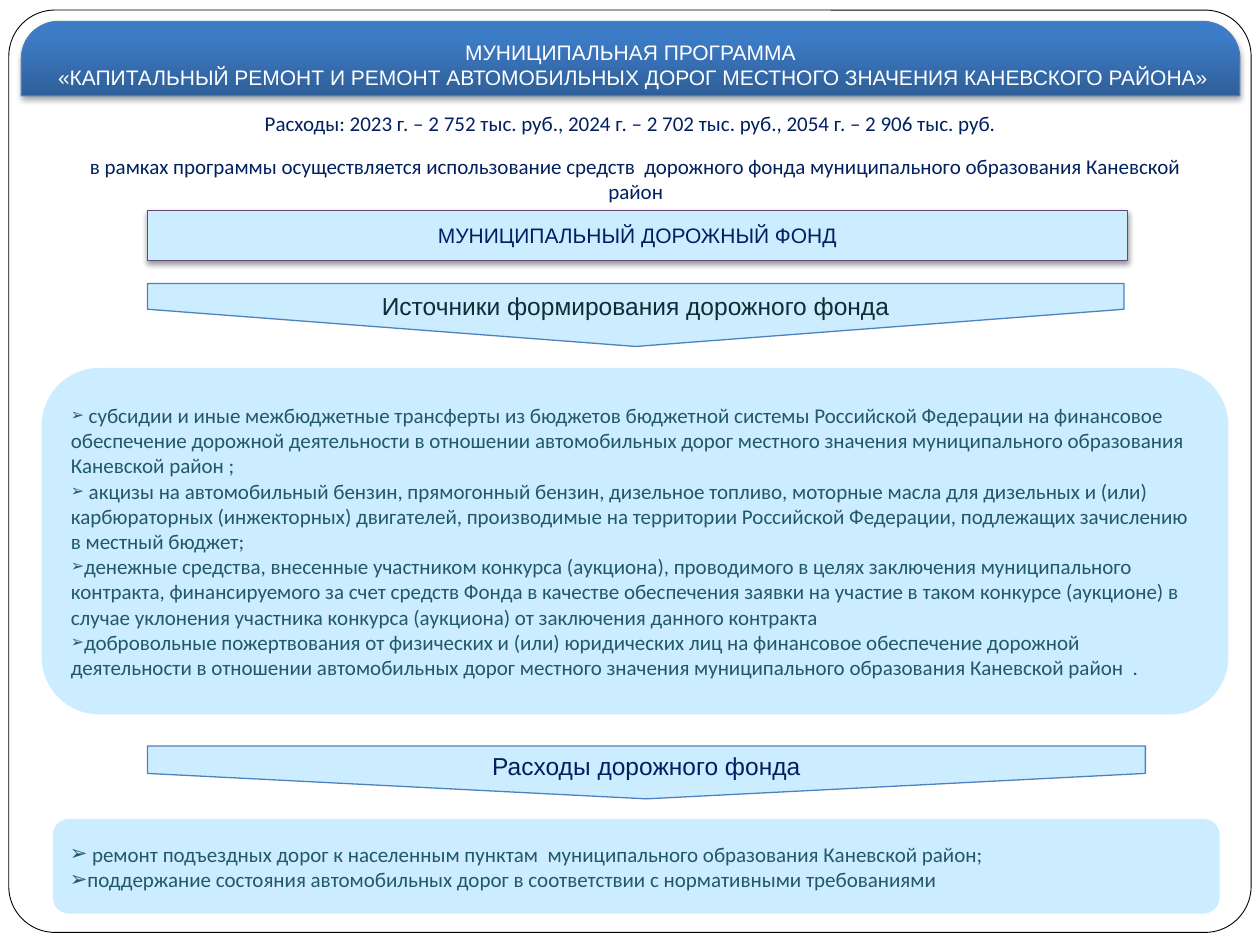
from lxml import etree
from pptx import Presentation
from pptx.dml.color import RGBColor
from pptx.enum import shapes, text
from pptx.oxml.ns import qn
from pptx.util import Inches, Pt

COLORS = {
    "white": "FFFFFF", "black": "000000", "panel": "CCECFF", "navy": "002060",
    "teal": "215968", "dark_teal": "102C34", "blue": "4F81BD", "purple": "604A7B",
    "header_line": "4B7EBC", "header_dark": "2F5F99", "header_light": "3D7CC7",
}
SHAPE = shapes.MSO_SHAPE
ANCHOR = text.MSO_ANCHOR

TITLE = [
    "МУНИЦИПАЛЬНАЯ ПРОГРАММА",
    " «КАПИТАЛЬНЫЙ РЕМОНТ И РЕМОНТ АВТОМОБИЛЬНЫХ ДОРОГ МЕСТНОГО ЗНАЧЕНИЯ КАНЕВСКОГО РАЙОНА»",
]
COSTS = "Расходы: 2023 г. – 2 752 тыс. руб., 2024 г. – 2 702 тыс. руб., 2054 г. – 2 906 тыс. руб."
PURPOSE = ("в рамках программы осуществляется использование средств  дорожного фонда "
           "муниципального образования Каневской район")
SOURCES = [
    " субсидии и иные межбюджетные трансферты из бюджетов бюджетной системы Российской "
    "Федерации на финансовое обеспечение дорожной деятельности в отношении автомобильных "
    "дорог местного значения муниципального образования Каневской район ;",
    " акцизы на автомобильный бензин, прямогонный бензин, дизельное топливо, моторные масла "
    "для дизельных и (или) карбюраторных (инжекторных) двигателей, производимые на территории "
    "Российской Федерации, подлежащих зачислению в местный бюджет;",
    "денежные средства, внесенные участником конкурса (аукциона), проводимого в целях "
    "заключения муниципального контракта, финансируемого за счет средств Фонда в качестве "
    "обеспечения заявки на участие в таком конкурсе (аукционе) в случае уклонения участника "
    "конкурса (аукциона) от заключения данного контракта",
    "добровольные пожертвования от физических и (или) юридических лиц на финансовое "
    "обеспечение дорожной деятельности в отношении автомобильных дорог местного значения "
    "муниципального образования Каневской район  .",
]
SPENDING = [
    " ремонт подъездных дорог к населенным пунктам  муниципального образования Каневской район;",
    "поддержание состояния автомобильных дорог в соответствии с нормативными требованиями",
]


def rgb(name):
    return RGBColor.from_string(COLORS[name])


def write(shape, lines, color="navy", font="Calibri", size=12,
          align=text.PP_ALIGN.CENTER, anchor=ANCHOR.MIDDLE, bullet_size=None):
    frame = shape.text_frame
    frame.word_wrap = True
    frame.auto_size = text.MSO_AUTO_SIZE.NONE
    frame.vertical_anchor = anchor
    for index, line in enumerate(lines):
        paragraph = frame.add_paragraph() if index else frame.paragraphs[0]
        paragraph.alignment = align
        run = paragraph.add_run()
        run.text = line
        run.font.name, run.font.size = font, Pt(size)
        run.font.color.rgb = rgb(color)
        if bullet_size:
            add_bullet(paragraph, bullet_size)


def add_bullet(paragraph, percent):
    properties = paragraph._p.get_or_add_pPr()
    properties.set("marL", "0")
    properties.set("indent", "0")
    for tag, name, value in (("a:buSzPct", "val", str(percent * 1000)),
                             ("a:buFont", "typeface", "Arial"),
                             ("a:buChar", "char", "➢")):
        etree.SubElement(properties, qn(tag)).set(name, value)


def add_block(slide, kind, left, top, width, height, fill="panel", line=None,
              line_width=0.75, adjustments=()):
    block = slide.shapes.add_shape(
        kind, Inches(left), Inches(top), Inches(width), Inches(height))
    for index, value in enumerate(adjustments):
        block.adjustments[index] = value
    block.fill.solid()
    block.fill.fore_color.rgb = rgb(fill)
    if line:
        block.line.color.rgb = rgb(line)
        block.line.width = Pt(line_width)
    else:
        block.line.fill.background()
    block.shadow.inherit = False
    return block


def add_shadow(shape, distance, opacity):
    effects = shape._element.spPr.find(qn("a:effectLst"))
    shadow = etree.SubElement(effects, qn("a:outerShdw"), blurRad=str(Pt(3.1)),
                              dist=str(Pt(distance)), dir="5400000", rotWithShape="0")
    tint = etree.SubElement(shadow, qn("a:srgbClr"), val=COLORS["black"])
    etree.SubElement(tint, qn("a:alpha"), val=str(opacity * 1000))


def add_down_pennant(slide, caption, left, top, width, height, point, color):
    """Banner pointing down: a pentagon turned a quarter, with its text turned back."""
    pennant = add_block(slide, SHAPE.PENTAGON, left + (width - height) / 2,
                        top + (height - width) / 2, height, width,
                        line="blue", adjustments=[point])
    pennant.rotation = 90
    write(pennant, [caption], color, "Arial", 14)
    pennant.text_frame._txBody.bodyPr.set("vert", "vert270")


def add_caption(slide, caption, left, top, width, height):
    box = slide.shapes.add_textbox(
        Inches(left), Inches(top), Inches(width), Inches(height))
    write(box, [caption], anchor=ANCHOR.TOP)


def add_list(slide, items, left, top, width, height, bullet_size):
    panel = add_block(slide, SHAPE.ROUNDED_RECTANGLE, left, top, width, height)
    write(panel, items, "teal", align=text.PP_ALIGN.LEFT, bullet_size=bullet_size)


def add_header(slide):
    place = 0.17, 0.17, 9.67, 0.59
    band = add_block(slide, SHAPE.ROUND_2_SAME_RECTANGLE, *place,
                     line="header_line", adjustments=[0.5, 0])
    band.fill.gradient()
    band.fill.gradient_angle = 90
    for stop, color, position in zip(band.fill.gradient_stops,
                                     ("header_dark", "header_light"), (0, 0.8)):
        stop.color.rgb = rgb(color)
        stop.position = position
    add_shadow(band, 1.8, 35)

    title = slide.shapes.title
    title.left, title.top, title.width, title.height = map(Inches, place)
    write(title, TITLE, "white", "Arial", anchor=ANCHOR.BOTTOM)
    slide.shapes._spTree.append(title._element)  # bring the title above its band


def main():
    deck = Presentation()
    deck.slide_width, deck.slide_height = Inches(10), Inches(7.5)
    slide = deck.slides.add_slide(deck.slide_layouts[5])

    add_block(slide, SHAPE.ROUNDED_RECTANGLE, 0.07, 0.08, 9.86, 7.32, fill="white",
              line="black", line_width=0.5, adjustments=[0.05])
    add_header(slide)
    add_caption(slide, COSTS, 0.17, 0.83, 9.67, 0.3)
    add_caption(slide, PURPOSE, 0.42, 1.17, 9.25, 0.38)

    fund = add_block(slide, SHAPE.FLOWCHART_PROCESS, 1.17, 1.67, 7.78, 0.4, line="purple")
    add_shadow(fund, 1.6, 38)
    write(fund, ["МУНИЦИПАЛЬНЫЙ ДОРОЖНЫЙ ФОНД"], font="Arial")

    add_down_pennant(slide, "Источники формирования дорожного фонда",
                     1.17, 2.25, 7.75, 0.5, 0.59, "dark_teal")
    add_list(slide, SOURCES, 0.33, 2.92, 9.42, 2.75, bullet_size=75)
    add_down_pennant(slide, "Расходы дорожного фонда",
                     1.17, 5.92, 7.92, 0.42, 0.48, "navy")
    add_list(slide, SPENDING, 0.42, 6.5, 9.26, 0.75, bullet_size=100)
    deck.save("out.pptx")


if __name__ == "__main__":
    main()
